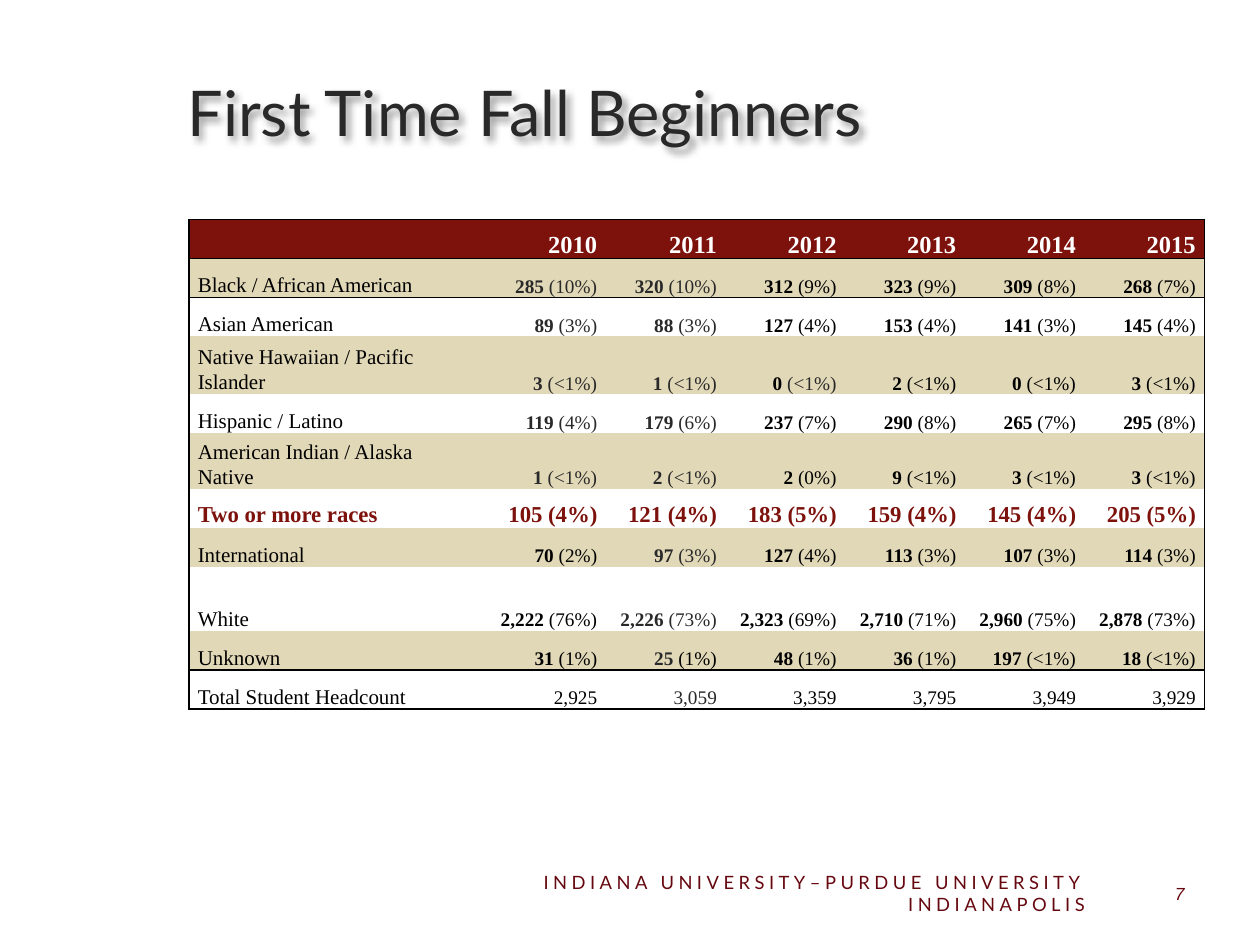
from lxml import etree
from pptx import Presentation
from pptx.dml.color import RGBColor
from pptx.enum.text import MSO_ANCHOR, PP_ALIGN
from pptx.oxml import parse_xml
from pptx.oxml.ns import qn
from pptx.util import Inches, Pt

BLACK = RGBColor(0x00, 0x00, 0x00)
WHITE = RGBColor(0xFF, 0xFF, 0xFF)
CHARCOAL = RGBColor(0x29, 0x29, 0x29)
CRIMSON = RGBColor(0x7D, 0x11, 0x0C)
MAROON = RGBColor(0x66, 0x08, 0x0F)
SAND = RGBColor(0xE1, 0xD8, 0xB7)

DRAWING_NS = "http://schemas.openxmlformats.org/drawingml/2006/main"
PLAIN_TABLE_STYLE = "{2D5ABB26-0587-4C30-8999-92F81FD0307C}"
SOFT_SHADOW = (
    f'<a:effectLst xmlns:a="{DRAWING_NS}">'
    '<a:outerShdw blurRad="50800" dist="38100" dir="2700000" algn="tl">'
    '<a:srgbClr val="000000"><a:alpha val="40000"/></a:srgbClr>'
    '</a:outerShdw></a:effectLst>'
)

COLUMN_WIDTHS = [2.22, 1.09] + [0.95] * 5
ROW_HEIGHT = 0.31
TALL_ROWS = {3: 0.46, 5: 0.44, 8: 0.51}
HIGHLIGHT_ROW = 6
ENROLLMENT = [
    ["", "2010", "2011", "2012", "2013", "2014", "2015"],
    ["Black / African American", "285 (10%)", "320 (10%)", "312 (9%)",
     "323 (9%)", "309 (8%)", "268 (7%)"],
    ["Asian American", "89 (3%)", "88 (3%)", "127 (4%)",
     "153 (4%)", "141 (3%)", "145 (4%)"],
    ["Native Hawaiian / Pacific Islander", "3 (<1%)", "1 (<1%)", "0 (<1%)",
     "2 (<1%)", "0 (<1%)", "3 (<1%)"],
    ["Hispanic / Latino", "119 (4%)", "179 (6%)", "237 (7%)",
     "290 (8%)", "265 (7%)", "295 (8%)"],
    ["American Indian / Alaska Native", "1 (<1%)", "2 (<1%)", "2 (0%)",
     "9 (<1%)", "3 (<1%)", "3 (<1%)"],
    ["Two or more races", "105 (4%)", "121 (4%)", "183 (5%)",
     "159 (4%)", "145 (4%)", "205 (5%)"],
    ["International", "70 (2%)", "97 (3%)", "127 (4%)",
     "113 (3%)", "107 (3%)", "114 (3%)"],
    ["White", "2,222 (76%)", "2,226 (73%)", "2,323 (69%)",
     "2,710 (71%)", "2,960 (75%)", "2,878 (73%)"],
    ["Unknown", "31 (1%)", "25 (1%)", "48 (1%)",
     "36 (1%)", "197 (<1%)", "18 (<1%)"],
    ["Total Student Headcount", "2,925", "3,059", "3,359",
     "3,795", "3,949", "3,929"],
]
LAST_ROW = len(ENROLLMENT) - 1
LAST_COLUMN = len(COLUMN_WIDTHS) - 1
PERCENT_COLORS = {(3, 3): CHARCOAL, (9, 2): BLACK}


class SlideBuilder:
    table_font = "Times New Roman"
    line_spacing = 1.07

    def __init__(self, slide):
        self.s = slide

    def style_run(self, r, font, size, color, bold=False, italic=False):
        r.font.name = font
        r.font.size = Pt(size)
        r.font.color.rgb = color
        r.font.bold = bold
        r.font.italic = italic

    def text(self, box, text, font, size, color, align=PP_ALIGN.LEFT,
             italic=False, spacing=None, shadow=False):
        sp = self.s.shapes.add_textbox(*[Inches(v) for v in box])
        tf = sp.text_frame
        tf.word_wrap = True
        tf.vertical_anchor = MSO_ANCHOR.MIDDLE
        tf.text = text
        p = tf.paragraphs[0]
        p.alignment = align
        r = p.runs[0]
        self.style_run(r, font, size, color, italic=italic)
        if spacing:
            r.font._element.set("spc", str(round(spacing * 100)))
        if shadow:
            sp._element.spPr.append(parse_xml(SOFT_SHADOW))

    def borders(self, cell, edges):
        tc_pr = cell._tc.get_or_add_tcPr()
        for side in ("L", "R", "T", "B"):
            if side in edges:
                ln = etree.SubElement(tc_pr, qn(f"a:ln{side}"), w=str(Pt(edges[side])))
                fill = etree.SubElement(ln, qn("a:solidFill"))
                etree.SubElement(fill, qn("a:srgbClr"), val=str(BLACK))

    def cell(self, cell, pieces, size, align, fill, edges):
        self.borders(cell, edges)
        if fill is None:
            cell.fill.background()
        else:
            cell.fill.solid()
            cell.fill.fore_color.rgb = fill
        cell.vertical_anchor = MSO_ANCHOR.BOTTOM
        cell.margin_left = cell.margin_right = Inches(0.07)
        cell.margin_top = cell.margin_bottom = 0
        p = cell.text_frame.paragraphs[0]
        p.alignment = align
        p.line_spacing = self.line_spacing
        for text, color, bold in pieces:
            r = p.add_run()
            r.text = text
            self.style_run(r, self.table_font, size, color, bold)

    def table(self, left, top, rows):
        heights = [TALL_ROWS.get(i, ROW_HEIGHT) for i in range(len(rows))]
        frame = self.s.shapes.add_table(
            len(rows), len(COLUMN_WIDTHS), Inches(left), Inches(top),
            Inches(sum(COLUMN_WIDTHS)), Inches(sum(heights)))
        tbl = frame.table
        tbl.first_row = tbl.horz_banding = False
        tbl._tbl.tblPr.find(qn("a:tableStyleId")).text = PLAIN_TABLE_STYLE
        for column, width in zip(tbl.columns, COLUMN_WIDTHS):
            column.width = Inches(width)
        for row, height in zip(tbl.rows, heights):
            row.height = Inches(height)
        for i, row in enumerate(rows):
            for j, text in enumerate(row):
                self.cell(tbl.cell(i, j), cell_pieces(i, j, text), cell_size(i, j),
                          PP_ALIGN.RIGHT if j else PP_ALIGN.LEFT,
                          row_fill(i), cell_edges(i, j))


def cell_pieces(i, j, text):
    if i == 0:
        return [(text, WHITE, True)]
    if i == HIGHLIGHT_ROW:
        return [(text, CRIMSON, True)]
    if j == 0:
        return [(text, BLACK, False)]
    muted = j == 2 or (j == 1 and i < HIGHLIGHT_ROW)
    color = CHARCOAL if muted else BLACK
    if i == LAST_ROW:
        return [(text, color, False)]
    count, percent = text.split()
    return [(count, color, True),
            (f" {percent}", PERCENT_COLORS.get((i, j), color), False)]


def cell_size(i, j):
    if i == 0:
        return 14
    if i == HIGHLIGHT_ROW:
        return 13
    return 11 if j else 12


def row_fill(i):
    if i == 0:
        return CRIMSON
    if i == LAST_ROW:
        return None
    return SAND if i % 2 else WHITE


def cell_edges(i, j):
    edges = {}
    if j == 0:
        edges["L"] = 1
    if j == LAST_COLUMN:
        edges["R"] = 1
    if i in (0, 1, LAST_ROW):
        edges["T"] = 1
    if i in (0, LAST_ROW - 1):
        edges["B"] = 1
    if i == LAST_ROW:
        edges["B"] = 1.5
    return edges


def main():
    prs = Presentation()
    prs.slide_width, prs.slide_height = Inches(10), Inches(7.5)
    slide = SlideBuilder(prs.slides.add_slide(prs.slide_layouts[6]))
    slide.text((1.39, 0.3, 8.11, 1.17), "First Time Fall Beginners",
               "Lato", 36, CHARCOAL, shadow=True)
    slide.text((4.04, 6.89, 4.67, 0.4),
               "INDIANA UNIVERSITY–PURDUE UNIVERSITY INDIANAPOLIS",
               "Lato", 10.5, MAROON, PP_ALIGN.RIGHT, spacing=2.6)
    slide.text((8.6, 6.89, 0.9, 0.4), "7", "Arial", 10, MAROON,
               PP_ALIGN.RIGHT, italic=True)
    slide.table(1.5, 1.74, ENROLLMENT)
    prs.save("out.pptx")


if __name__ == "__main__":
    main()
